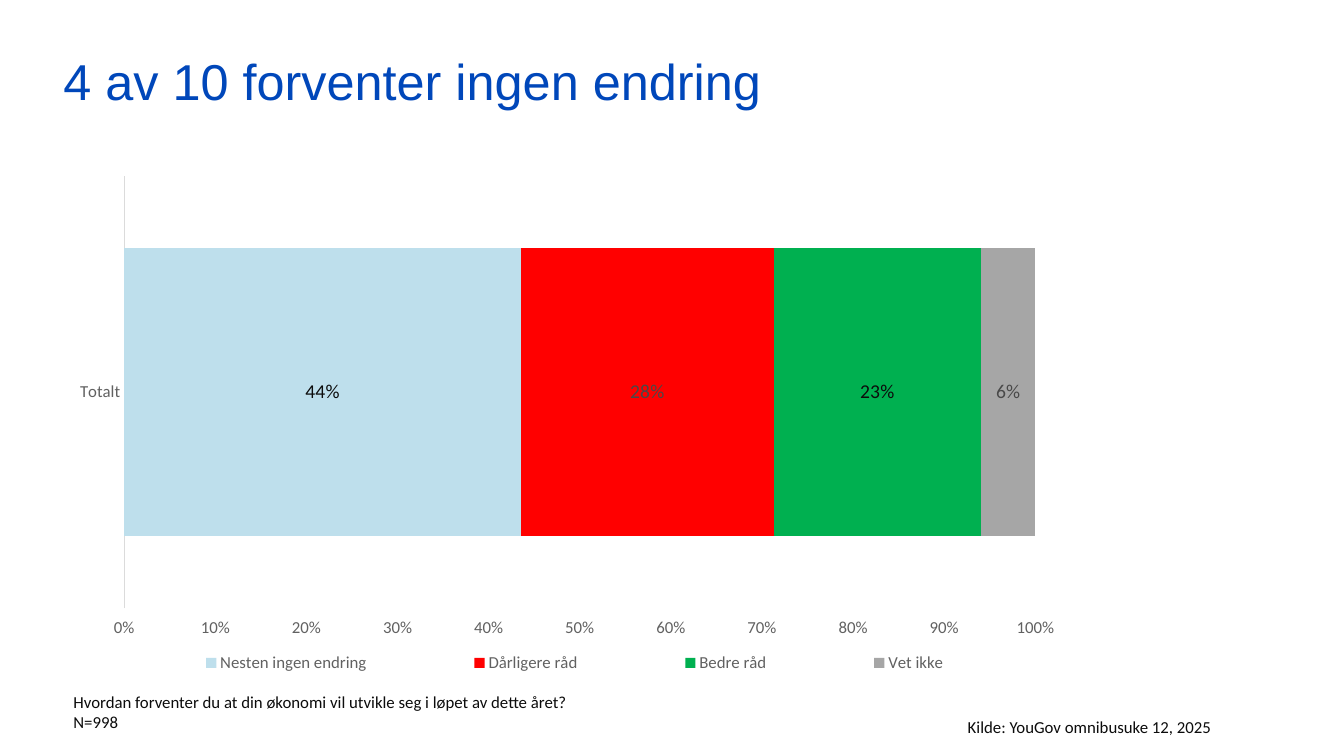
from dataclasses import dataclass

from lxml import etree
from pptx import Presentation
from pptx.chart.data import CategoryChartData
from pptx.dml.color import RGBColor
from pptx.enum.chart import (XL_AXIS_CROSSES, XL_CHART_TYPE, XL_LEGEND_POSITION,
                             XL_TICK_LABEL_POSITION, XL_TICK_MARK)
from pptx.enum.text import MSO_ANCHOR, MSO_AUTO_SIZE
from pptx.oxml.ns import qn
from pptx.util import Inches, Pt

STACKED = XL_CHART_TYPE.BAR_STACKED_100
BOTTOM = XL_LEGEND_POSITION.BOTTOM
NO_TICK = XL_TICK_MARK.NONE
AT_MAXIMUM = XL_AXIS_CROSSES.MAXIMUM
HIGH = XL_TICK_LABEL_POSITION.HIGH
TOP = MSO_ANCHOR.TOP
FIT_SHAPE = MSO_AUTO_SIZE.SHAPE_TO_FIT_TEXT

WIDTH, HEIGHT = 13.33, 7.5
LEFT, MAIN_WIDTH = 0.63, 10.04
PLOT_SHARES = (0.06, 0.02, 0.9, 0.83)
LEGEND_SHARES = (0.04, 0.93, 0.93, 0.05)


@dataclass(frozen=True)
class Theme:
    """Colours, fonts and type sizes of the slide."""
    title: str = "0047BA"
    ink: str = "0C0C0C"
    muted: str = "494949"
    axis: str = "616161"
    line: str = "DBDBDB"
    title_font: str = "Arial"
    body_font: str = "Calibri"
    title_size: int = 36
    label_size: int = 14
    body_size: int = 12


THEME = Theme()
ANSWERS = [
    ("Nesten ingen endring", 0.44, "BEDFEC", THEME.ink),
    ("Dårligere råd", 0.28, "FF0000", THEME.muted),
    ("Bedre råd", 0.23, "00B050", THEME.ink),
    ("Vet ikke", 0.06, "A6A6A6", THEME.muted),
]


def style_font(font, size, color, name=THEME.body_font):
    """Set size, colour and typeface of a font."""
    font.size = Pt(size)
    font.color.rgb = RGBColor.from_string(color)
    font.name = name


def add_text(s, box, text, size, color, name=THEME.body_font):
    """Add a wrapping text box and return its text frame."""
    tf = s.shapes.add_textbox(*map(Inches, box)).text_frame
    tf.word_wrap = True
    tf.vertical_anchor = TOP
    tf.text = text
    for p in tf.paragraphs:
        for r in p.runs:
            style_font(r.font, size, color, name)
    return tf


def add_title(s, box, text):
    """Add the heading without insets."""
    tf = add_text(s, box, text, THEME.title_size, THEME.title, THEME.title_font)
    tf.margin_left = tf.margin_right = tf.margin_top = tf.margin_bottom = 0


def add_note(s, box, text):
    """Add a small note that grows with its text."""
    tf = add_text(s, box, text, THEME.body_size, THEME.ink)
    tf.auto_size = FIT_SHAPE


def place_part(part, before, shares, inner=False):
    """Place a chart part by shares of the chart, ahead of a child element."""
    for old in part.findall(qn("c:layout")):
        part.remove(old)
    layout = etree.Element(qn("c:layout"))
    part.find(qn(before)).addprevious(layout)
    manual = etree.SubElement(layout, qn("c:manualLayout"))
    settings = [("layoutTarget", "inner")] if inner else []
    settings += [("xMode", "edge"), ("yMode", "edge"), *zip("xywh", shares)]
    for tag, value in settings:
        etree.SubElement(manual, qn(f"c:{tag}")).set("val", str(value))


def style_axis(axis):
    """Remove gridlines and tick marks and style the tick labels."""
    axis.has_major_gridlines = False
    axis.major_tick_mark = axis.minor_tick_mark = NO_TICK
    style_font(axis.tick_labels.font, THEME.body_size, THEME.axis)


def style_series(series, fill, label_color):
    """Colour a series and show its value as a percentage."""
    series.format.fill.solid()
    series.format.fill.fore_color.rgb = RGBColor.from_string(fill)
    labels = series.data_labels
    labels.show_value = True
    labels.number_format, labels.number_format_is_linked = "0%", False
    style_font(labels.font, THEME.label_size, label_color)


def add_answer_chart(s, box, category, answers):
    """Add the stacked bar of answer shares."""
    data = CategoryChartData(number_format="0%")
    data.categories = [category]
    for name, share, *_ in answers:
        data.add_series(name, [share])
    chart = s.shapes.add_chart(STACKED, *map(Inches, box), data).chart
    style_font(chart.font, THEME.body_size, THEME.ink)
    chart.has_title = False
    chart.has_legend = True
    legend = chart.legend
    legend.position = BOTTOM
    legend.include_in_layout = False
    style_font(legend.font, THEME.body_size, THEME.axis)

    cat, val = chart.category_axis, chart.value_axis
    for axis in (cat, val):
        style_axis(axis)
    cat.reverse_order = True
    cat.crosses = AT_MAXIMUM
    cat.format.line.color.rgb = RGBColor.from_string(THEME.line)
    cat.format.line.width = Pt(0.75)
    val.minimum_scale, val.maximum_scale, val.major_unit = 0, 1, 0.1
    val.tick_label_position = HIGH
    val.tick_labels.number_format = "0%"
    val.tick_labels.number_format_is_linked = False
    val.format.line.fill.background()

    plot = chart.plots[0]
    plot.gap_width, plot.overlap = 50, 100
    plot.vary_by_categories = False
    for series, (_, _, fill, label_color) in zip(plot.series, answers):
        style_series(series, fill, label_color)
    plot_area = chart.element.find(".//" + qn("c:plotArea"))
    place_part(plot_area, "c:barChart", PLOT_SHARES, inner=True)
    place_part(chart.element.find(".//" + qn("c:legend")), "c:overlay", LEGEND_SHARES)


def main():
    """Build and save the slide."""
    prs = Presentation()
    prs.slide_width, prs.slide_height = Inches(WIDTH), Inches(HEIGHT)
    s = prs.slides.add_slide(prs.slide_layouts[6])
    add_title(s, (LEFT, 0.5, MAIN_WIDTH, 1.21), "4 av 10 forventer ingen endring")
    add_answer_chart(s, (LEFT, 1.64, MAIN_WIDTH, 5.17), "Totalt", ANSWERS)
    add_note(s, (LEFT, 6.81, 5.66, 0.5),
             "Hvordan forventer du at din økonomi vil utvikle seg i løpet av dette året?\nN=998")
    add_note(s, (9.5, 7.06, 2.96, 0.3), "Kilde: YouGov omnibusuke 12, 2025")
    prs.save("out.pptx")


if __name__ == "__main__":
    main()
